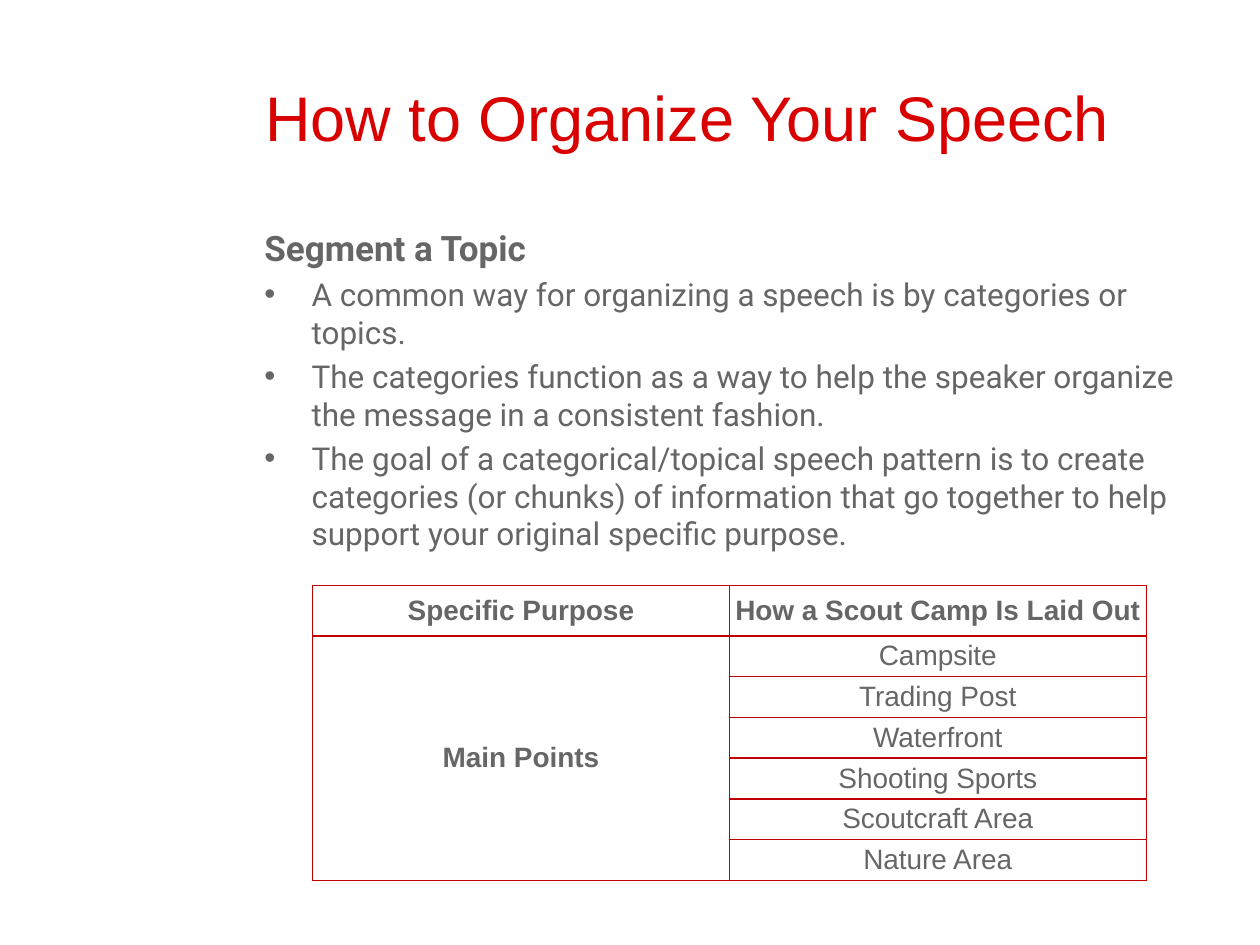
from dataclasses import dataclass

from lxml import etree
from pptx import Presentation
from pptx.dml.color import RGBColor
from pptx.enum.text import MSO_ANCHOR, PP_ALIGN
from pptx.oxml.ns import qn
from pptx.util import Pt

MIDDLE = MSO_ANCHOR.MIDDLE
TOP = MSO_ANCHOR.TOP
CENTER = PP_ALIGN.CENTER
RED = "D90000"
GRAY = "666666"
RULE = "C00000"
INDENT = Pt(27)


@dataclass
class Style:
    size: float
    face: str
    color: str = GRAY
    bold: bool = False


@dataclass
class Line:
    text: str
    style: Style
    bullet: bool = False


@dataclass
class Box:
    left: float
    top: float
    width: float
    height: float
    anchor: MSO_ANCHOR
    lines: list[Line]


TITLE = Style(36, "Arial", RED)
HEAD = Style(20, "Roboto", bold=True)
BODY = Style(18, "Roboto")
LABEL = Style(16, "Arial", bold=True)
ITEM = Style(16, "Arial")

BOXES = [
    Box(144.5, 21.6, 539.5, 90, MIDDLE, [Line("How to Organize Your Speech", TITLE)]),
    Box(144, 126, 562.5, 195, TOP, [
        Line("Segment a Topic", HEAD),
        Line("A common way for organizing a speech is by categories or topics.", BODY, True),
        Line("The categories function as a way to help the speaker organize "
             "the message in a consistent fashion.", BODY, True),
        Line("The goal of a categorical/topical speech pattern is to create "
             "categories (or chunks) of information that go together to help "
             "support your original specific purpose.", BODY, True),
    ]),
]
HEADS = ["Specific Purpose", "How a Scout Camp Is Laid Out"]
POINTS = ["Campsite", "Trading Post", "Waterfront", "Shooting Sports",
          "Scoutcraft Area", "Nature Area"]


def paint(code: str) -> RGBColor:
    return RGBColor.from_string(code)


def format_runs(para, style: Style) -> None:
    for run in para.runs:
        font = run.font
        font.size = Pt(style.size)
        font.name = style.face
        font.bold = style.bold
        font.color.rgb = paint(style.color)


def add_bullet(para) -> None:
    props = para._p.get_or_add_pPr()
    props.set("marL", str(INDENT))
    props.set("indent", str(-INDENT))
    etree.SubElement(props, qn("a:buFont"), typeface="Arial")
    etree.SubElement(props, qn("a:buChar"), char="•")


def draw_box(slide, box: Box) -> None:
    shape = slide.shapes.add_textbox(
        Pt(box.left), Pt(box.top), Pt(box.width), Pt(box.height))
    frame = shape.text_frame
    frame.word_wrap = True
    frame.vertical_anchor = box.anchor
    for i, line in enumerate(box.lines):
        para = frame.add_paragraph() if i else frame.paragraphs[0]
        para.text = line.text
        if i:
            para.space_before = Pt(3.6)
        if line.bullet:
            add_bullet(para)
        format_runs(para, line.style)


def add_rules(cell) -> None:
    props = cell._tc.get_or_add_tcPr()
    for side in ("lnL", "lnR", "lnT", "lnB"):
        edge = etree.SubElement(props, qn(f"a:{side}"), w=str(Pt(1)))
        fill = etree.SubElement(edge, qn("a:solidFill"))
        etree.SubElement(fill, qn("a:srgbClr"), val=RULE)


def fill_cell(cell, text: str, style: Style) -> None:
    para = cell.text_frame.paragraphs[0]
    para.text = text
    para.alignment = CENTER
    format_runs(para, style)


def draw_table(slide) -> None:
    count = len(POINTS) + 1
    table = slide.shapes.add_table(
        count, 2, Pt(178.6), Pt(334.6), Pt(476.4), Pt(168.6)).table
    table.first_row = False
    table.horz_banding = False
    for i, row in enumerate(table.rows):
        row.height = Pt(23.3 if i else 28.8)
    for cell in table.iter_cells():
        cell.margin_left = cell.margin_right = 0
        cell.margin_top = cell.margin_bottom = 0
        cell.vertical_anchor = MIDDLE
        add_rules(cell)
        cell.fill.background()
    table.cell(1, 0).merge(table.cell(count - 1, 0))
    for col, text in enumerate(HEADS):
        fill_cell(table.cell(0, col), text, LABEL)
    fill_cell(table.cell(1, 0), "Main Points", LABEL)
    for row, text in enumerate(POINTS, 1):
        fill_cell(table.cell(row, 1), text, ITEM)


def main() -> None:
    deck = Presentation()
    deck.slide_width = Pt(720)
    deck.slide_height = Pt(540)
    slide = deck.slides.add_slide(deck.slide_layouts[6])
    for box in BOXES:
        draw_box(slide, box)
    draw_table(slide)
    deck.save("out.pptx")


if __name__ == "__main__":
    main()
